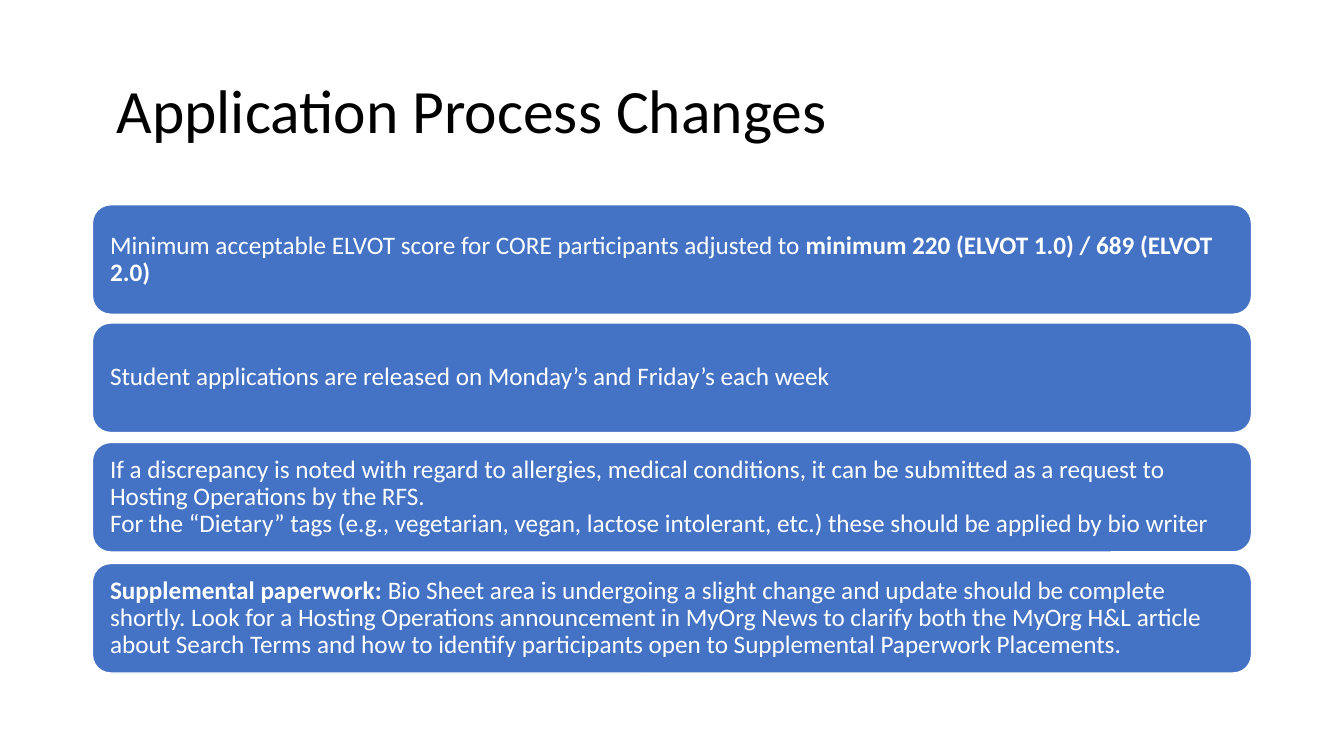
from dataclasses import dataclass

from pptx import Presentation
from pptx.dml.color import RGBColor
from pptx.enum import shapes, text
from pptx.util import Cm, Pt


@dataclass(frozen=True)
class Theme:
    font: str = "Calibri"
    title_size: int = 44
    body_size: int = 18
    ink: str = "000000"
    card: str = "4472C4"
    paper: str = "FFFFFF"


TITLE = "Application Process Changes"
CARDS = [
    (5.16, [[("Minimum acceptable ELVOT score for CORE participants adjusted to ", False),
             ("minimum 220 (ELVOT 1.0) / 689 (ELVOT 2.0)", True)]]),
    (8.14, [[("Student applications are released on Monday’s and Friday’s each week", False)]]),
    (11.15, [[("If a discrepancy is noted with regard to allergies, medical conditions, it can be "
               "submitted as a request to Hosting Operations by the RFS.", False)],
             [("For the “Dietary” tags (e.g., vegetarian, vegan, lactose intolerant, etc.) "
               "these should be applied by bio writer", False)]]),
    (14.2, [[("Supplemental paperwork: ", True),
             ("Bio Sheet area is undergoing a slight change and update should be complete shortly. "
              "Look for a Hosting Operations announcement in MyOrg News to clarify both the MyOrg "
              "H&L article about Search Terms and how to identify participants open to "
              "Supplemental Paperwork Placements.", False)]]),
]
LEFT, WIDTH, CARD_HEIGHT = Cm(2.33), Cm(29.21), Cm(2.76)
theme = Theme()


def write(tf, paragraphs, size, color, inset):
    tf.word_wrap = True
    tf.vertical_anchor = text.MSO_ANCHOR.MIDDLE
    tf.margin_left = inset
    for i, runs in enumerate(paragraphs):
        p = tf.paragraphs[0] if i == 0 else tf.add_paragraph()
        p.alignment = text.PP_ALIGN.LEFT
        p.line_spacing = 0.9
        p.font.name = theme.font
        p.font.size = Pt(size)
        p.font.color.rgb = RGBColor.from_string(color)
        for words, bold in runs:
            r = p.add_run()
            r.text = words
            r.font.bold = bold


def add_card(s, top, paragraphs):
    sp = s.shapes.add_shape(shapes.MSO_SHAPE.ROUNDED_RECTANGLE, LEFT, Cm(top), WIDTH, CARD_HEIGHT)
    sp.shadow.inherit = False
    sp.fill.solid()
    sp.fill.fore_color.rgb = RGBColor.from_string(theme.card)
    sp.line.color.rgb = RGBColor.from_string(theme.paper)
    sp.line.width = Pt(1)
    write(sp.text_frame, paragraphs, theme.body_size, theme.paper, Cm(0.31))


def main():
    prs = Presentation()
    prs.slide_width, prs.slide_height = Cm(33.87), Cm(19.05)
    s = prs.slides.add_slide(prs.slide_layouts[6])
    title = s.shapes.add_textbox(LEFT, Cm(1.01), WIDTH, Cm(3.68))
    write(title.text_frame, [[(TITLE, False)]], theme.title_size, theme.ink, Cm(0.61))
    for top, paragraphs in CARDS:
        add_card(s, top, paragraphs)
    prs.save("out.pptx")


if __name__ == "__main__":
    main()
